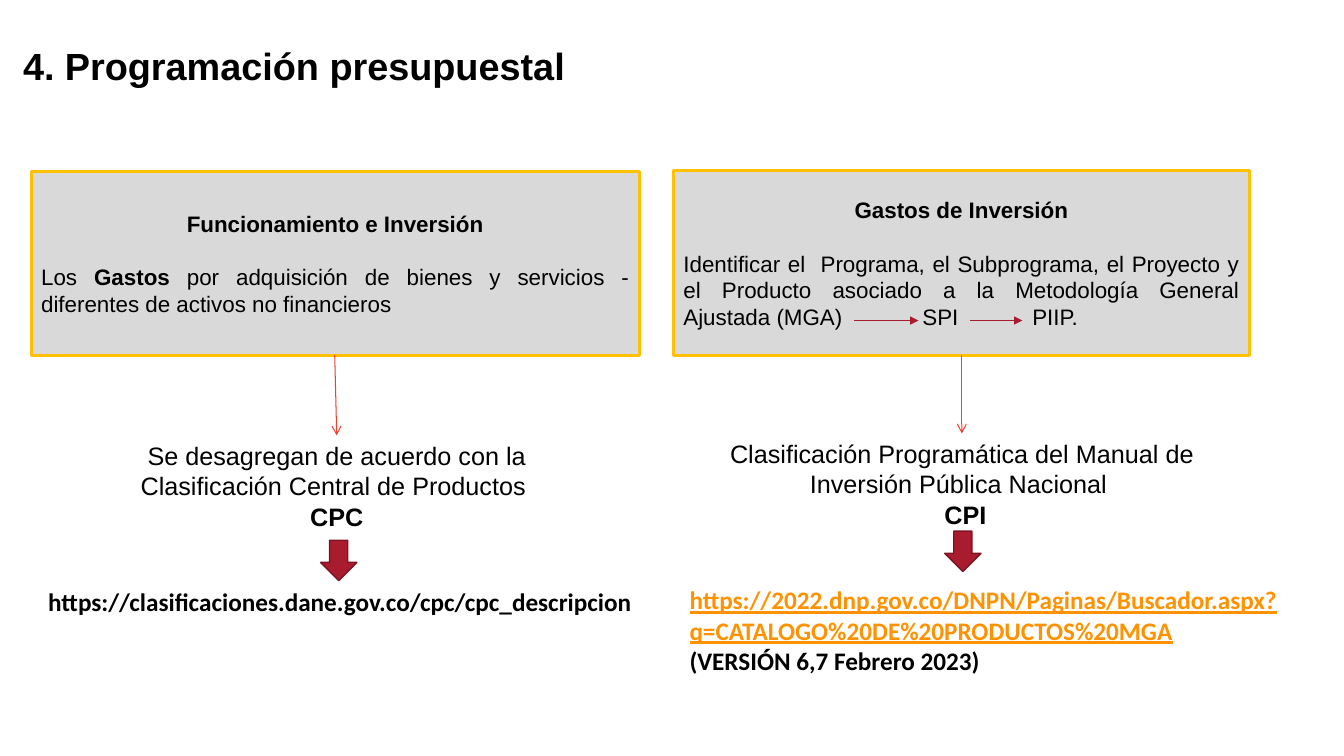
from dataclasses import dataclass
from lxml.etree import SubElement
from pptx import Presentation
from pptx.dml.color import RGBColor as RGB
from pptx.enum.shapes import MSO_CONNECTOR as Conn, MSO_SHAPE as Kind
from pptx.enum.text import MSO_ANCHOR as Anchor, PP_ALIGN as Align
from pptx.oxml.ns import qn
from pptx.util import Inches, Pt


@dataclass(frozen=True)
class Theme:
    ink: str = "000000"
    panel: str = "D9D9D9"
    gold: str = "FFC000"
    wine: str = "A91B2E"
    edge: str = "7D1422"
    red: str = "E9422D"
    link: str = "FF9200"
    sans: str = "Arial"
    web: str = "Calibri"
    title: int = 27
    body: int = 18
    small: int = 16


class Deck:
    def __init__(self, theme):
        self.theme = theme
        self.prs = Presentation()
        self.prs.slide_width = Inches(13.33)
        self.prs.slide_height = Inches(7.5)
        self.slide = self.prs.slides.add_slide(self.prs.slide_layouts[6])

    def fill(self, para, runs, size, face, align=Align.LEFT):
        para.alignment = align
        if face == self.theme.sans:
            para.line_spacing = Pt(size * 1.2)
        for text, bold, color in runs:
            run = para.add_run()
            run.text = text
            font = run.font
            font.name, font.size, font.bold = face, Pt(size), bold
            font.color.rgb = RGB.from_string(color)
            font.underline = color == self.theme.link

    def text(self, box, paras, size, face, align=Align.LEFT):
        frame = self.slide.shapes.add_textbox(*map(Inches, box)).text_frame
        frame.word_wrap = True
        for i, runs in enumerate(paras):
            para = frame.add_paragraph() if i else frame.paragraphs[0]
            self.fill(para, runs, size, face, align)

    def shape(self, kind, box, fill, line, width):
        shape = self.slide.shapes.add_shape(kind, *map(Inches, box))
        shape.shadow.inherit = False
        shape.fill.solid()
        shape.fill.fore_color.rgb = RGB.from_string(fill)
        shape.line.color.rgb = RGB.from_string(line)
        shape.line.width = Pt(width)
        return shape

    def panel(self, box, head, runs, tabs=()):
        t = self.theme
        frame = self.shape(Kind.RECTANGLE, box, t.panel, t.gold, 2.25).text_frame
        frame.word_wrap = True
        frame.vertical_anchor = Anchor.MIDDLE
        self.fill(frame.paragraphs[0], [(head, True, t.ink)], t.small, t.sans, Align.CENTER)
        para = frame.add_paragraph()
        para.space_before = Pt(t.small * 1.2)
        if tabs:
            stops = SubElement(para._p.get_or_add_pPr(), qn("a:tabLst"))
            for pos in tabs:
                SubElement(stops, qn("a:tab"), pos=str(Inches(pos)), algn="l")
        self.fill(para, runs, t.small, t.sans, Align.JUSTIFY)

    def arrow(self, start, end, color, width, head):
        line = self.slide.shapes.add_connector(
            Conn.STRAIGHT, *map(Inches, start + end))
        line.line.color.rgb = RGB.from_string(color)
        line.line.width = Pt(width)
        SubElement(line.line._get_or_add_ln(), qn("a:tailEnd"), type=head)
        SubElement(line._element.spPr, qn("a:effectLst"))


def main():
    t = Theme()
    deck = Deck(t)
    deck.text((0.13, 0.37, 8.71, 0.56),
              [[("4. Programación presupuestal", True, t.ink)]], t.title, t.sans)

    deck.panel((0.31, 1.7, 6.03, 1.83), "Funcionamiento e Inversión", [
        ("Los ", False, t.ink),
        ("Gastos", True, t.ink),
        (" por adquisición de bienes y servicios - diferentes de activos no financieros",
         False, t.ink)])
    deck.panel((6.68, 1.69, 5.71, 1.84), "Gastos de Inversión", [
        ("Identificar el  Programa, el Subprograma, el Proyecto y el Producto asociado "
         "a la Metodología General Ajustada (MGA)\tSPI\tPIIP.", False, t.ink)],
        tabs=(2.37, 3.46))

    notes = [
        ((0.82, 4.32, 5.04, 1.01),
         "Se desagregan de acuerdo con la Clasificación Central de Productos ", "CPC"),
        ((7.08, 4.3, 4.92, 1.01),
         "Clasificación Programática del Manual de Inversión Pública Nacional ", " CPI"),
    ]
    for box, body, code in notes:
        deck.text(box, [[(body, False, t.ink)], [(code, True, t.ink)]],
                  t.body, t.sans, Align.CENTER)

    for start, end in [((3.32, 3.52), (3.34, 4.32)), ((9.54, 3.52), (9.54, 4.3))]:
        deck.arrow(start, end, t.red, 0.75, "arrow")
    for left, right in [(8.47, 9.11), (9.62, 10.14)]:
        deck.arrow((left, 3.18), (right, 3.18), t.wine, 0.5, "triangle")
    for left, top in [(3.18, 5.36), (9.37, 5.27)]:
        deck.shape(Kind.DOWN_ARROW, (left, top, 0.36, 0.4), t.wine, t.edge, 1)

    deck.text((0.38, 5.77, 6.71, 0.4),
              [[("https://clasificaciones.dane.gov.co/cpc/cpc_descripcion", True, t.ink)]],
              t.body, t.web)
    deck.text((6.74, 5.75, 6.35, 1.01), [
        [("https://2022.dnp.gov.co/DNPN/Paginas/Buscador.aspx?"
          "q=CATALOGO%20DE%20PRODUCTOS%20MGA", True, t.link)],
        [("(VERSIÓN 6,7 Febrero 2023)", True, t.ink)]], t.body, t.web)
    deck.prs.save("out.pptx")


if __name__ == "__main__":
    main()
